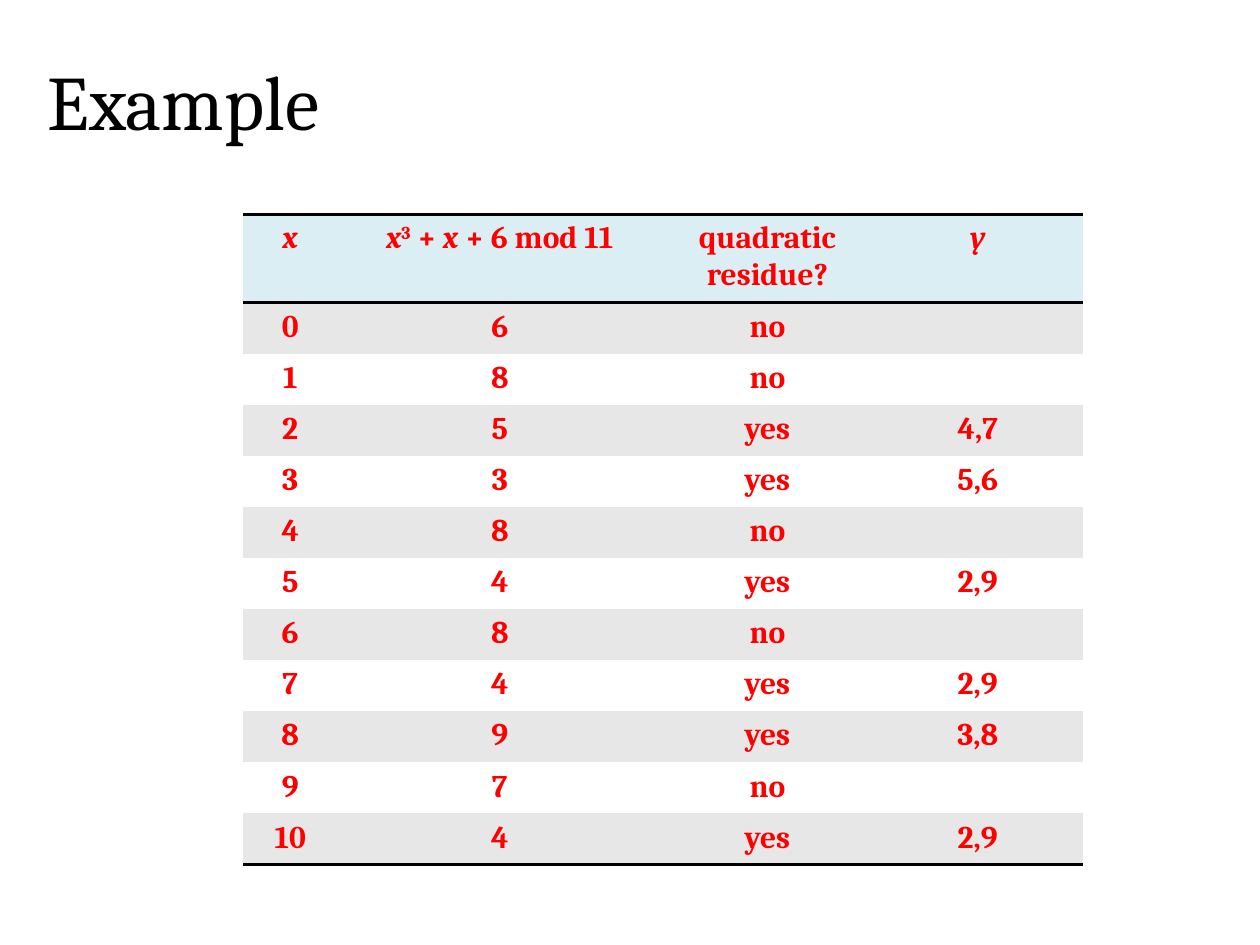
from lxml import etree
from pptx import Presentation
from pptx import util as u
from pptx.dml.color import RGBColor
from pptx.enum import text
from pptx.oxml.ns import qn

FONT = "Cambria"
BLACK, RED = "000000", "FF0000"
HEADER_FILL, ODD_FILL, EVEN_FILL = "DBEEF4", "E7E7E7", "FFFFFF"
NO_STYLE = "{2D5ABB26-0587-4C30-8999-92F81FD0307C}"
COLUMN_WIDTHS = (1.9, 6.55, 4.24, 4.24)
HEADER_HEIGHT, ROW_HEIGHT = 1.71, 1.03

# Each header is a list of (text, style) runs
HEADERS = [
    [("x", "italic")],
    [("x", "italic"), ("3", "superscript"), (" + ", ""),
     ("x", "italic"), (" + 6 mod 11", "")],
    [("quadratic residue?", "")],
    [("y", "italic")],
]
# x, x³ + x + 6 mod 11, quadratic residue?, y
ROWS = [
    ("0", "6", "no", ""),
    ("1", "8", "no", ""),
    ("2", "5", "yes", "4,7"),
    ("3", "3", "yes", "5,6"),
    ("4", "8", "no", ""),
    ("5", "4", "yes", "2,9"),
    ("6", "8", "no", ""),
    ("7", "4", "yes", "2,9"),
    ("8", "9", "yes", "3,8"),
    ("9", "7", "no", ""),
    ("10", "4", "yes", "2,9"),
]


def color(value):
    return RGBColor.from_string(value)


def set_font(font, size, value, bold=False):
    font.name, font.size, font.bold = FONT, u.Pt(size), bold
    font.color.rgb = color(value)


def add_title(slide, title):
    shape = slide.shapes.add_textbox(u.Cm(0.71), u.Cm(0.43), u.Cm(23.42), u.Cm(3.18))
    frame = shape.text_frame
    frame.word_wrap = True
    frame.vertical_anchor = text.MSO_ANCHOR.MIDDLE
    frame.text = title
    set_font(frame.paragraphs[0].font, 44, BLACK)


def add_borders(cell, sides):
    # Border lines come before the fill in the cell properties
    properties = cell._tc.get_or_add_tcPr()
    for position, side in enumerate(sides):
        line = etree.Element(qn(f"a:ln{side}"), w=str(u.Pt(2)))
        fill = etree.SubElement(line, qn("a:solidFill"))
        etree.SubElement(fill, qn("a:srgbClr"), val=BLACK)
        properties.insert(position, line)


def fill_cell(cell, runs, fill, borders):
    cell.fill.solid()
    cell.fill.fore_color.rgb = color(fill)
    add_borders(cell, borders)
    paragraph = cell.text_frame.paragraphs[0]
    paragraph.alignment = text.PP_ALIGN.CENTER
    set_font(paragraph.font, 18, RED, bold=True)
    for content, style in runs:
        run = paragraph.add_run()
        run.text = content
        if style == "italic":
            run.font.italic = True
        elif style == "superscript":
            run._r.get_or_add_rPr().set("baseline", "30000")


def add_residue_table(slide):
    rows = [HEADERS] + [[[(value, "")] if value else [] for value in row] for row in ROWS]
    heights = [HEADER_HEIGHT] + [ROW_HEIGHT] * len(ROWS)
    frame = slide.shapes.add_table(
        len(rows), len(COLUMN_WIDTHS), u.Cm(4.9), u.Cm(4.32),
        u.Cm(sum(COLUMN_WIDTHS)), u.Cm(sum(heights)))
    table = frame.table
    table._tbl.tblPr.find(qn("a:tableStyleId")).text = NO_STYLE
    for column, width in zip(table.columns, COLUMN_WIDTHS):
        column.width = u.Cm(width)
    for index, (row, height) in enumerate(zip(rows, heights)):
        table.rows[index].height = u.Cm(height)
        if index == 0:
            fill, borders = HEADER_FILL, "TB"
        else:
            fill = ODD_FILL if index % 2 else EVEN_FILL
            borders = "B" if index == len(ROWS) else ""
        for cell, runs in zip(table.rows[index].cells, row):
            fill_cell(cell, runs, fill, borders)


def main():
    presentation = Presentation()
    presentation.slide_width, presentation.slide_height = u.Cm(25.4), u.Cm(19.05)
    slide = presentation.slides.add_slide(presentation.slide_layouts[6])
    add_title(slide, "Example")
    add_residue_table(slide)
    presentation.save("out.pptx")


if __name__ == "__main__":
    main()
